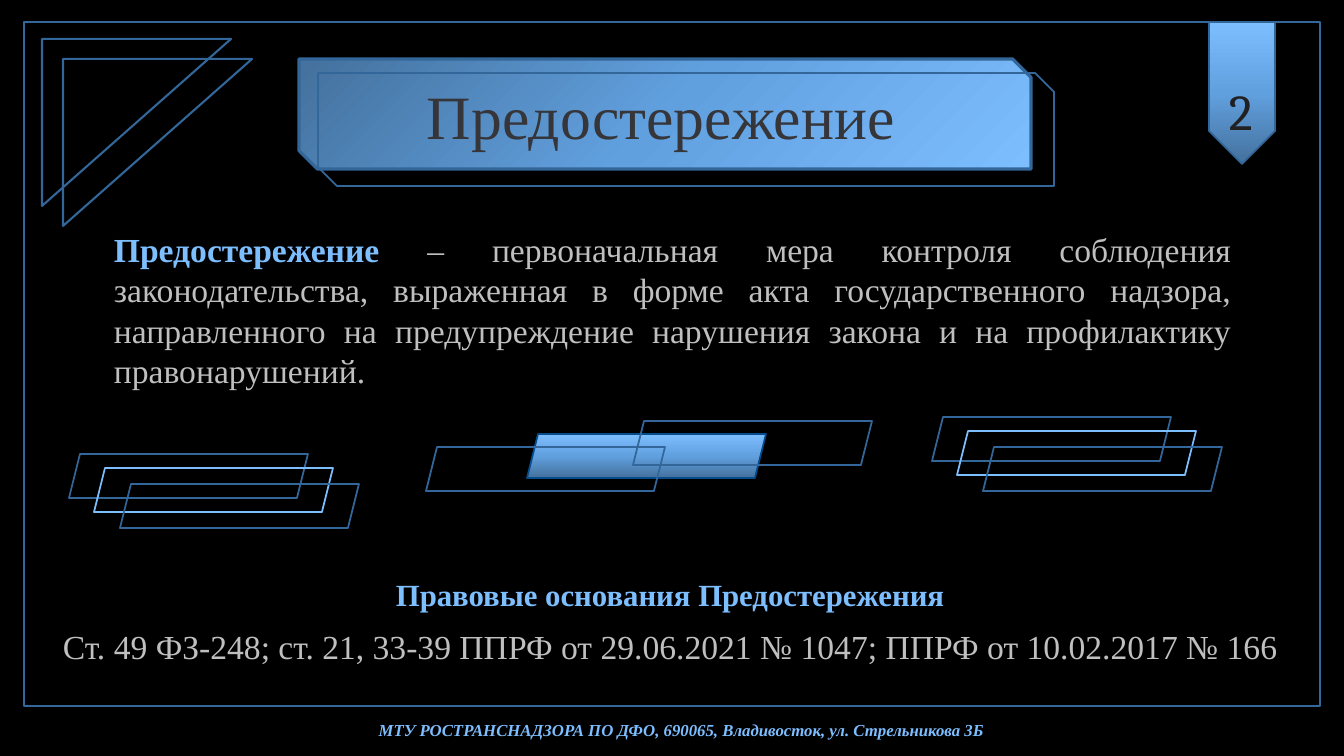
from copy import deepcopy
from lxml import etree
from pptx import Presentation
from pptx import util as u
from pptx.dml.color import RGBColor
from pptx.enum import shapes, text
from pptx.oxml.ns import qn

PX = 914400 / 100.8
BLACK = RGBColor(0, 0, 0)
EDGE = RGBColor(0x33, 0x66, 0x99)
DEEP = RGBColor(0x05, 0x4C, 0x8D)
SKY = RGBColor(0x7D, 0xBE, 0xFF)
GREY = RGBColor(0xBF, 0xBF, 0xBF)
DARK = RGBColor(0x36, 0x36, 0x3A)
INK = RGBColor(0x21, 0x21, 0x23)
FADE = [(0, RGBColor(0x44, 0x71, 0x9D)), (0.5, RGBColor(0x61, 0xA0, 0xDF)), (1, SKY)]
SERIF, CAMBRIA = "Times New Roman", "Cambria"
KIND = shapes.MSO_SHAPE
LEFT, MID, JUST = text.PP_ALIGN.LEFT, text.PP_ALIGN.CENTER, text.PP_ALIGN.JUSTIFY

# Content: a paragraph is (alignment, space before, runs), a run is (text, size, colour, style)
FOOTER = [(MID, 0, [("МТУ РОСТРАНСНАДЗОРА ПО ДФО, 690065, Владивосток, ул. Стрельникова 3Б", 12, SKY, "bi")])]
NUMBER = [(LEFT, 0, [("2", 36, INK, "")])]
TITLE = [(MID, 0, [("Предостережение", 44, DARK, "")])]
MEANING = [(JUST, 0, [
    ("Предостережение ", 24, SKY, "b"),
    ("– первоначальная мера контроля соблюдения законодательства, выраженная в форме акта "
     "государственного надзора, направленного на предупреждение нарушения закона и на "
     "профилактику правонарушений.", 24, GREY, "")])]
BASIS = [
    (MID, 0, [("Правовые основания Предостережения", 22, SKY, "b")]),
    (MID, 9, [("Ст. 49 ФЗ-248; ст. 21, 33-39 ППРФ от 29.06.2021 № 1047; ППРФ от 10.02.2017 № 166",
               24, GREY, "")])]

# Ornaments
BAR = (239, 44)
STACKS = [(932, 417), (69, 454)]
STEPS = [(0, 0, EDGE), (25, 14, SKY), (51, 30, EDGE)]
PAIR = [(426, 447), (633, 421)]
CORNERS = [(42, 39), (63, 59)]

deck = Presentation()
deck.slide_width, deck.slide_height = u.Inches(13.333), u.Inches(7.5)
slide = deck.slides.add_slide(deck.slide_layouts[6])
slide.background.fill.solid()
slide.background.fill.fore_color.rgb = BLACK


def emu(*nums):
    return [u.Emu(round(n * PX)) for n in nums]


def draw(kind, box, edge=EDGE, width=1.25, angle=None):
    """Add an outline, with the blue fade at a clockwise angle if one is given."""
    item = slide.shapes.add_shape(kind, *emu(*box))
    item.shadow.inherit = False
    item.line.color.rgb = edge
    item.line.width = u.Pt(width)
    if angle is None:
        item.fill.background()
        return item
    item.fill.gradient()
    item.fill.gradient_angle = 360 - angle
    stops = item._element.spPr.find(qn("a:gradFill")).find(qn("a:gsLst"))
    stops.append(deepcopy(stops[0]))
    for stop, (place, tint) in zip(item.fill.gradient_stops, FADE):
        stop.position = place
        stop.color.rgb = tint
    return item


def write(box, paras, font=SERIF, wrap=True, lines=None):
    frame = slide.shapes.add_textbox(*emu(*box)).text_frame
    frame.word_wrap = wrap
    for i, (align, gap, runs) in enumerate(paras):
        para = frame.add_paragraph() if i else frame.paragraphs[0]
        para.alignment = align
        para.space_before = u.Pt(gap)
        if lines:
            para.line_spacing = lines
        for words, size, tint, style in runs:
            run = para.add_run()
            run.text = words
            run.font.name = font
            run.font.size = u.Pt(size)
            run.font.color.rgb = tint
            run.font.bold = "b" in style
            run.font.italic = "i" in style


# Frame, footer and corner triangles
draw(KIND.PARALLELOGRAM, (527, 434, *BAR), DEEP, angle=270)
draw(KIND.RECTANGLE, (24, 22, 1296, 684), width=1.5)
write((225, 719, 913, 26), FOOTER, lines=0.8)
for x, y in CORNERS:
    corner = draw(KIND.RIGHT_TRIANGLE, (x, y, 189, 167), width=1.5)
    corner._element.spPr.find(qn("a:xfrm")).set("flipV", "1")

# Page ribbon
ribbon = draw(KIND.PENTAGON, (1171, 60, 142, 66), angle=180)
ribbon.rotation = 90
write((1219, 75, 48, 72), NUMBER, CAMBRIA, wrap=False)

# Definition and title plate
write((104, 224, 1137, 173), MEANING)
draw(KIND.SNIP_2_DIAG_RECTANGLE, (299, 59, 732, 110), width=2.25, angle=45)
write((415, 73, 492, 85), TITLE, wrap=False)
draw(KIND.SNIP_2_DIAG_RECTANGLE, (318, 73, 736, 113))

# Legal basis
write((32, 571, 1276, 102), BASIS)

# Slanted bars
for x, y in STACKS:
    for dx, dy, tint in STEPS:
        draw(KIND.PARALLELOGRAM, (x + dx, y + dy, *BAR), tint)
for spot in PAIR:
    draw(KIND.PARALLELOGRAM, (*spot, *BAR))

deck.save("out.pptx")
